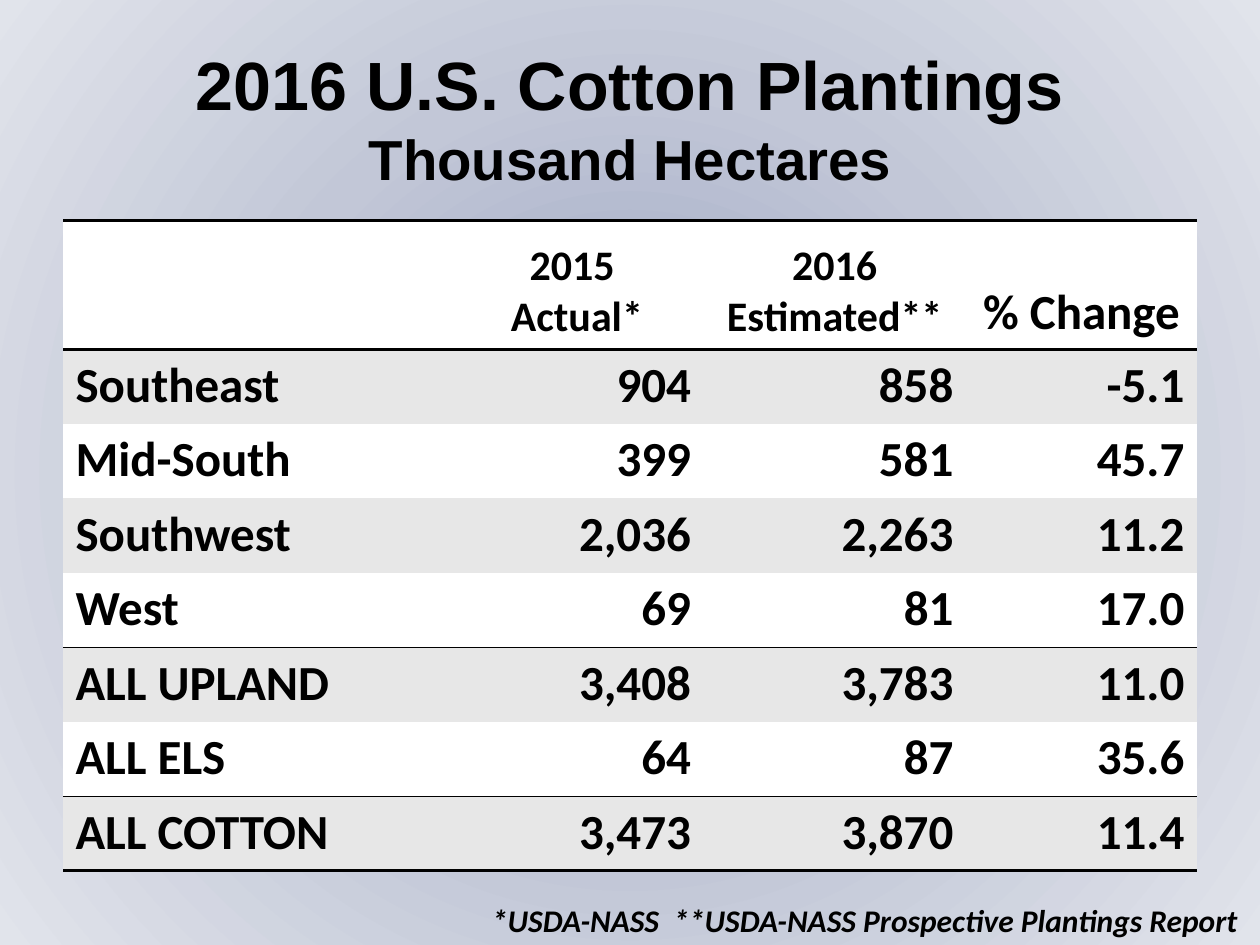
from lxml.etree import SubElement as Sub
from pptx import Presentation
from pptx.dml.color import RGBColor
from pptx.enum.text import MSO_ANCHOR as Anchor, PP_ALIGN as Align
from pptx.oxml.ns import qn
from pptx.util import Pt

ROWS = [
    ("Southeast", "904", "858", "-5.1"),
    ("Mid-South", "399", "581", "45.7"),
    ("Southwest", "2,036", "2,263", "11.2"),
    ("West", "69", "81", "17.0"),
    ("ALL UPLAND", "3,408", "3,783", "11.0"),
    ("ALL ELS", "64", "87", "35.6"),
    ("ALL COTTON", "3,473", "3,870", "11.4"),
]
HEAD = [("", 28), ("2015\n Actual*", 24), ("2016 Estimated**", 24), ("% Change", 28)]
WIDTHS = [216, 150, 150, 132]
RULES = {0: 2, 1: 2, 5: 1, 7: 1, 8: 2}


def color(code):
    return RGBColor.from_string(code)


def write(frame, text, sizes, font="Calibri", align=Align.LEFT, anchor=Anchor.TOP, italic=None):
    frame.word_wrap = True
    frame.vertical_anchor = anchor
    for i, line in enumerate(text.split("\n")):
        para = frame.paragraphs[0] if i == 0 else frame.add_paragraph()
        para.alignment = align
        run = para.add_run()
        run.text = line
        face = run.font
        face.name, face.size = font, Pt(sizes[min(i, len(sizes) - 1)])
        face.bold, face.italic = True, italic
        face.color.rgb = color(ink)


ink = "000000"


class Page:
    def __init__(self, slide, ink, bands):
        self.slide, self.ink, self.bands = slide, ink, bands

    def back(self, stops):
        self.slide.background.fill.gradient()
        grad = self.slide.element.find(".//" + qn("a:gradFill"))
        for child in list(grad):
            grad.remove(child)
        group = Sub(grad, qn("a:gsLst"))
        for place, code in stops:
            stop = Sub(group, qn("a:gs"), pos=str(place * 1000))
            Sub(stop, qn("a:srgbClr"), val=code)
        shade = Sub(grad, qn("a:path"), path="circle")
        Sub(shade, qn("a:fillToRect"), {side: "50000" for side in "ltrb"})

    def text(self, box, text, sizes, **style):
        shape = self.slide.shapes.add_textbox(*map(Pt, box))
        write(shape.text_frame, text, sizes, **style)

    def rule(self, cell, side, width):
        line = Sub(cell._tc.get_or_add_tcPr(), qn("a:" + side), w=str(Pt(width)))
        if width:
            Sub(Sub(line, qn("a:solidFill")), qn("a:srgbClr"), val=self.ink)
        else:
            Sub(line, qn("a:noFill"))

    def cell(self, cell, row):
        for side, width in (("lnL", 0), ("lnR", 0),
                            ("lnT", RULES.get(row, 0)), ("lnB", RULES.get(row + 1, 0))):
            self.rule(cell, side, width)
        cell.fill.solid()
        cell.fill.fore_color.rgb = color(self.bands[row % 2])

    def table(self, box, head, rows, widths, tall, low):
        grid = self.slide.shapes.add_table(len(rows) + 1, len(widths), *map(Pt, box)).table
        for col, width in zip(grid.columns, widths):
            col.width = Pt(width)
        for i, row in enumerate(grid.rows):
            row.height = Pt(low if i else tall)
            for j, cell in enumerate(row.cells):
                self.cell(cell, i)
                if i:
                    side = Align.RIGHT if j else Align.LEFT
                    write(cell.text_frame, rows[i - 1][j], [28], align=side)
                else:
                    text, size = head[j]
                    write(cell.text_frame, text, [size], align=Align.CENTER)
                    cell.vertical_anchor = Anchor.BOTTOM


def main():
    deck = Presentation()
    deck.slide_width, deck.slide_height = Pt(720), Pt(540)
    page = Page(deck.slides.add_slide(deck.slide_layouts[6]), ink, ("FFFFFF", "E7E7E7"))
    page.back([(0, "98A3C1"), (50, "C2C7D7"), (100, "E1E4EB")])
    page.text((36, 21.6, 648, 90), "2016 U.S. Cotton Plantings\nThousand Hectares",
              [39, 32.2], font="Arial", align=Align.CENTER, anchor=Anchor.MIDDLE)
    page.table((36, 126, 648, 371.8), HEAD, ROWS, WIDTHS, 73.6, 42.6)
    page.text((270, 511.2, 450, 28.8),
              " *USDA-NASS  **USDA-NASS Prospective Plantings Report", [18], italic=True)
    deck.save("out.pptx")


if __name__ == "__main__":
    main()
